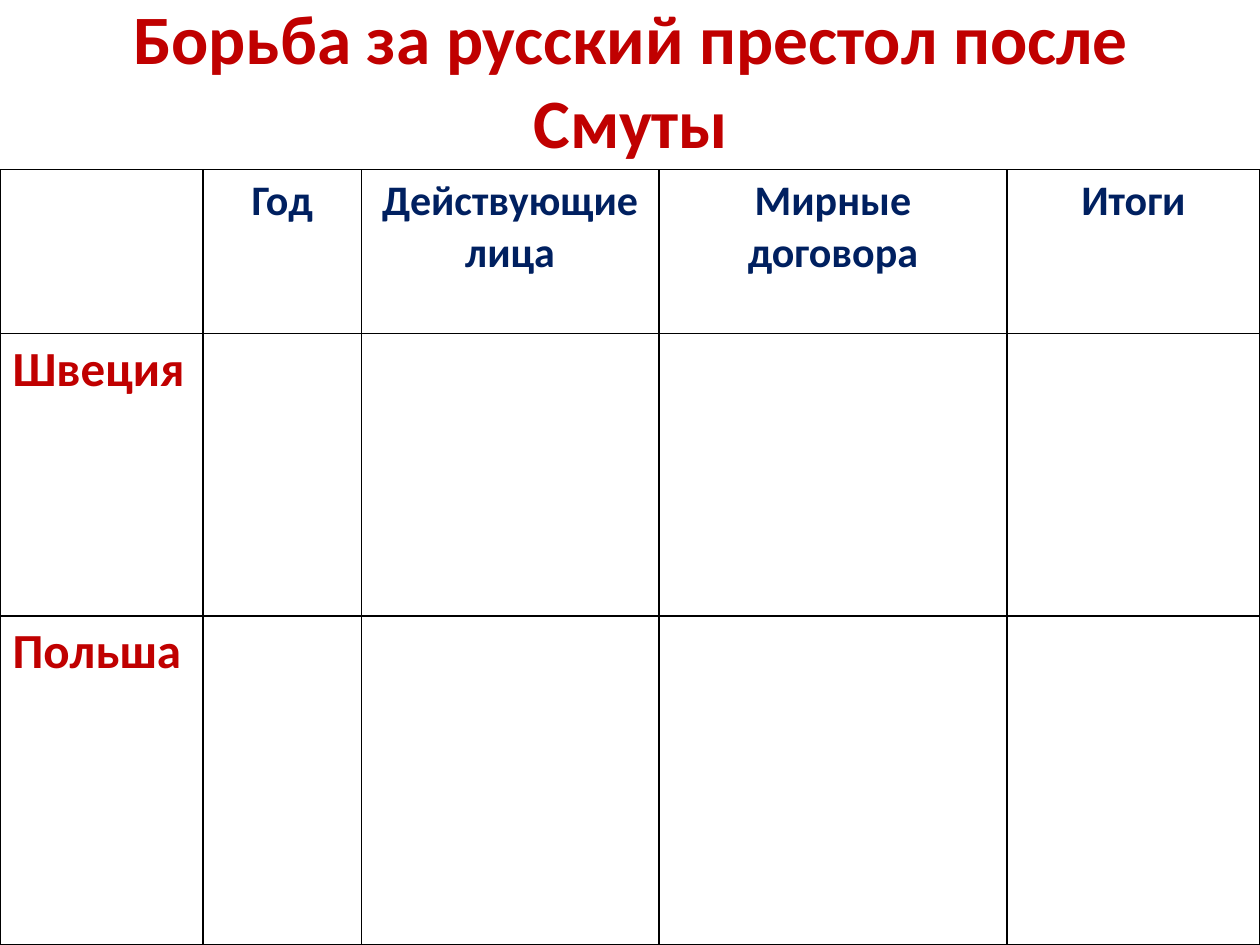
from lxml import etree
from pptx import Presentation
from pptx.dml.color import RGBColor
from pptx.enum import text
from pptx.oxml.ns import qn
from pptx.util import Pt

RED = "C00000"
NAVY = "002060"
BLACK = "000000"
COLS = [116, 90.5, 170, 199, 144.5]
ROWS = [93.5, 161.5, 188]
HEADS = ["", "Год", "Действующие лица", "Мирные договора", "Итоги"]
LANDS = ["Швеция", "Польша"]


def tint(hue):
    return RGBColor.from_string(hue)


def write(frame, words, size, hue, align):
    frame.text = words
    para = frame.paragraphs[0]
    para.alignment = align
    for run in para.runs:
        font = run.font
        font.name = "Calibri"
        font.size = Pt(size)
        font.bold = True
        font.color.rgb = tint(hue)


def border(cell):
    props = cell._tc.get_or_add_tcPr()
    for i, side in enumerate(["lnL", "lnR", "lnT", "lnB"]):
        line = etree.Element(qn("a:" + side), w=str(Pt(1)))
        fill = etree.SubElement(line, qn("a:solidFill"))
        etree.SubElement(fill, qn("a:srgbClr"), val=BLACK)
        props.insert(i, line)


def add_title(slide):
    title = slide.shapes.title
    title.left, title.top = Pt(36.5), Pt(0)
    title.width, title.height = Pt(648), Pt(90)
    frame = title.text_frame
    frame.word_wrap = True
    frame.auto_size = text.MSO_AUTO_SIZE.NONE
    frame.vertical_anchor = text.MSO_ANCHOR.MIDDLE
    write(frame, "Борьба за русский престол после Смуты", 39.6, RED,
          text.PP_ALIGN.CENTER)


def add_grid(slide):
    table = slide.shapes.add_table(
        len(ROWS), len(COLS), Pt(0), Pt(97), Pt(sum(COLS)), Pt(sum(ROWS))
    ).table
    table.first_row = False
    table.horz_banding = False
    for col, width in zip(table.columns, COLS):
        col.width = Pt(width)
    for row, height in zip(table.rows, ROWS):
        row.height = Pt(height)
    for cell in table.iter_cells():
        cell.fill.background()
        border(cell)
    for i, head in enumerate(HEADS):
        write(table.cell(0, i).text_frame, head, 24, NAVY,
              text.PP_ALIGN.CENTER)
    for i, land in enumerate(LANDS, 1):
        write(table.cell(i, 0).text_frame, land, 28, RED,
              text.PP_ALIGN.LEFT)


def main():
    deck = Presentation()
    deck.slide_width, deck.slide_height = Pt(720), Pt(540)
    slide = deck.slides.add_slide(deck.slide_layouts[5])
    add_title(slide)
    add_grid(slide)
    deck.save("out.pptx")


if __name__ == "__main__":
    main()
